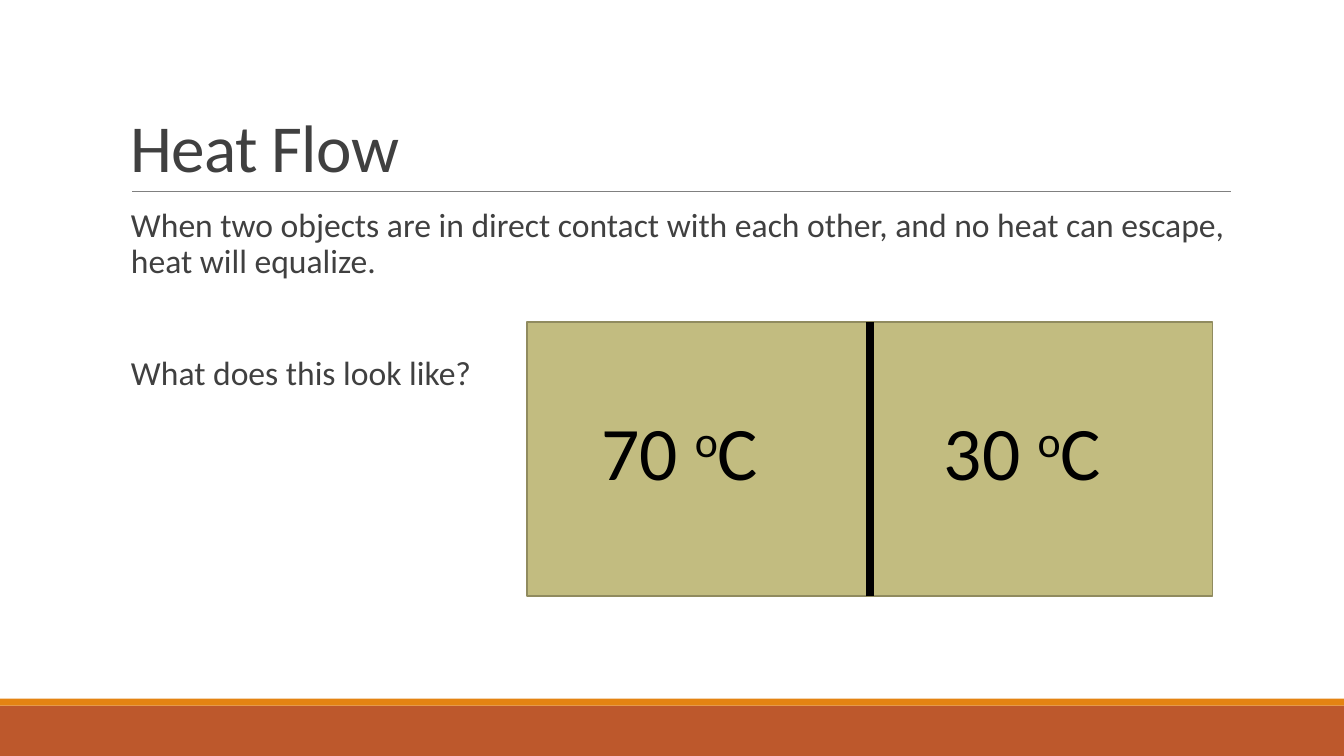
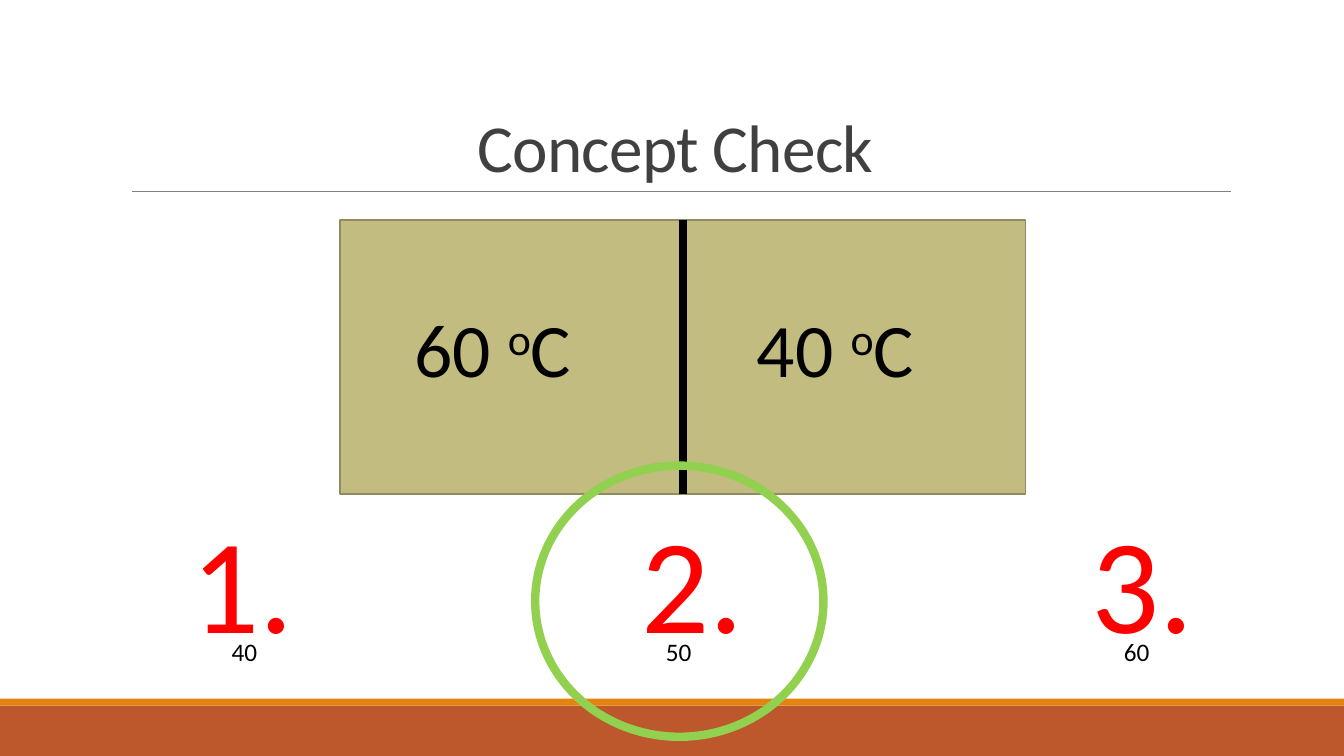
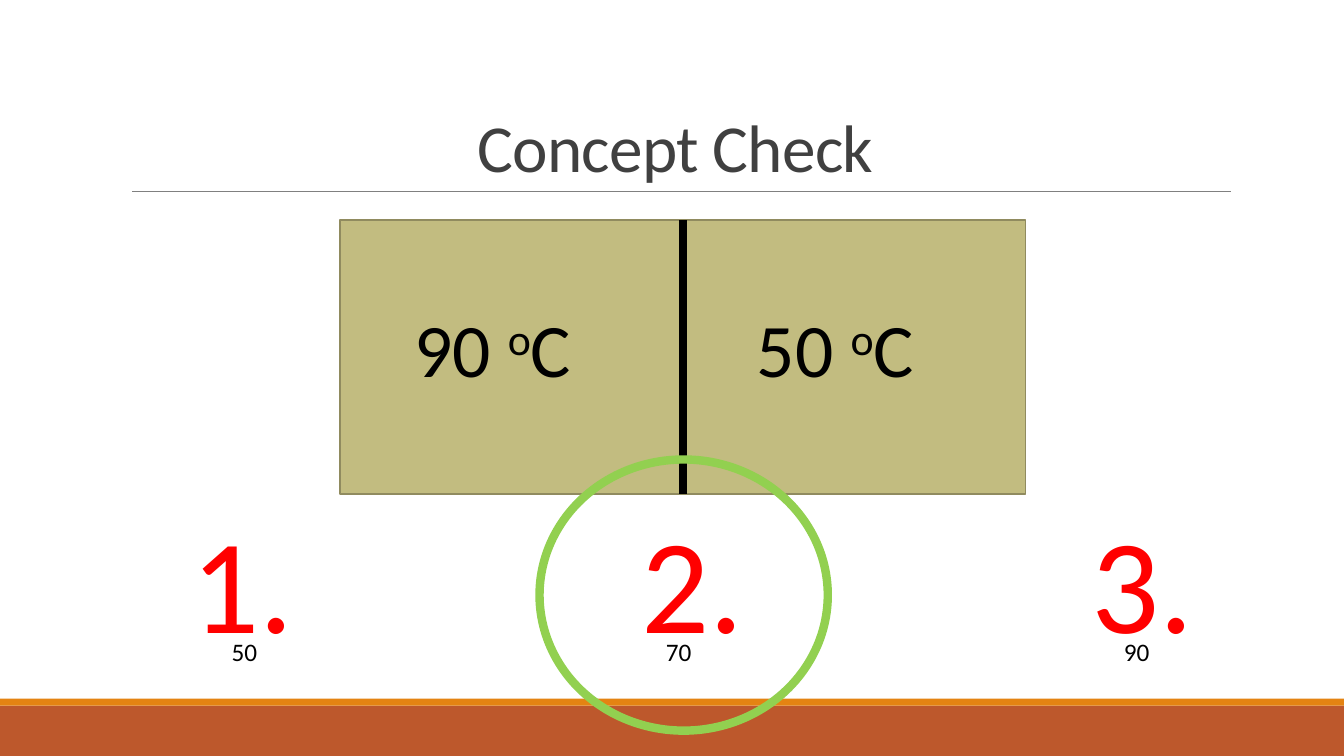
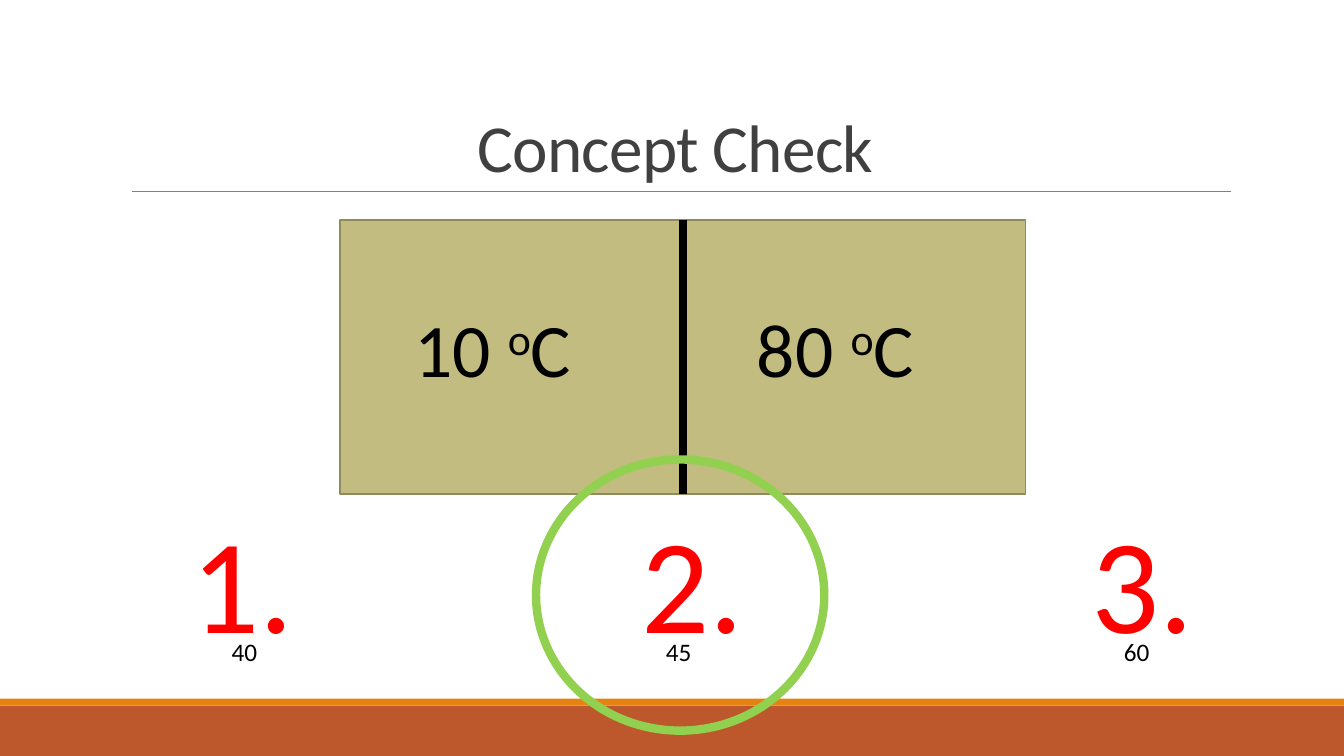
from dataclasses import dataclass

from lxml.etree import SubElement
from pptx import Presentation
from pptx.dml.color import RGBColor
from pptx.enum.shapes import MSO_CONNECTOR, MSO_SHAPE
from pptx.enum.text import MSO_ANCHOR, MSO_AUTO_SIZE, PP_ALIGN
from pptx.oxml.ns import qn
from pptx.shapes.autoshape import Shape
from pptx.shapes.connector import Connector
from pptx.slide import Slide
from pptx.text.text import TextFrame, _Paragraph
from pptx.util import Pt


@dataclass(frozen=True)
class Theme:
    font: str = "Calibri"
    ink: str = "404040"
    black: str = "000000"
    rule: str = "808080"
    footer: str = "BD582C"
    footer_edge: str = "E48312"
    block: str = "C2BC80"
    block_edge: str = "908B5F"
    number: str = "FF0000"
    correct: str = "92D050"
    title_size: float = 48
    body_size: float = 24
    degrees_size: float = 54
    number_size: float = 96
    answer_size: float = 18


@dataclass(frozen=True)
class Box:
    """A rectangle on the slide, in points."""
    left: float
    top: float
    width: float
    height: float

    def lengths(self) -> tuple[Pt, Pt, Pt, Pt]:
        return Pt(self.left), Pt(self.top), Pt(self.width), Pt(self.height)


@dataclass(frozen=True)
class Check:
    temperatures: tuple[int, int]
    answers: tuple[int, int, int]
    ring_left: float
    ring_top: float


THEME = Theme()
SLIDE_WIDTH, SLIDE_HEIGHT = 960, 540
FOOTER_TOP, FOOTER_EDGE_HEIGHT = 504, 4.9
RULE_LEFT, RULE_RIGHT, RULE_TOP = 94.4, 879, 136.8
TITLE = Box(86.4, 22.3, 792, 114.5)
BODY = Box(93.6, 145.4, 784.8, 316.8)
BLOCK_WIDTH, BLOCK_HEIGHT = 489.6, 195.8
NUMBER_LEFT, NUMBER_STEP, NUMBER_TOP = 129.6, 321.5, 352.8
ANSWER_CENTRES, ANSWER_WIDTH, ANSWER_TOP = (174.6, 484.7, 811.8), 132, 450.7
RING_WIDTH, RING_HEIGHT = 205.9, 193.7

BODY_TEXT = (
    "When two objects are in direct contact with each other, "
    "and no heat can escape, heat will equalize.",
    "What does this look like?",
)
CHECKS = (
    Check((60, 40), (40, 50, 60), 382.3, 332.6),
    Check((90, 50), (50, 70, 90), 385.4, 328.2),
    Check((10, 80), (40, 45, 60), 382.9, 328.2),
)


# Drawing helpers
def rgb(colour: str) -> RGBColor:
    return RGBColor.from_string(colour)


def add_figure(slide: Slide, kind: MSO_SHAPE, box: Box, fill: str | None = None,
               line: str | None = None, line_width: float = 0) -> Shape:
    figure = slide.shapes.add_shape(kind, *box.lengths())
    figure.shadow.inherit = False
    if fill:
        figure.fill.solid()
        figure.fill.fore_color.rgb = rgb(fill)
    else:
        figure.fill.background()
    if line:
        figure.line.color.rgb = rgb(line)
        figure.line.width = Pt(line_width)
    else:
        figure.line.fill.background()
    return figure


def add_line(slide: Slide, start: tuple[float, float], end: tuple[float, float],
             colour: str, width: float) -> Connector:
    line = slide.shapes.add_connector(
        MSO_CONNECTOR.STRAIGHT, *(Pt(value) for value in (*start, *end)))
    line.line.color.rgb = rgb(colour)
    line.line.width = Pt(width)
    SubElement(line._element.spPr, qn("a:effectLst"))
    return line


def add_text_frame(slide: Slide, box: Box) -> TextFrame:
    frame = slide.shapes.add_textbox(*box.lengths()).text_frame
    frame.word_wrap = True
    return frame


def style(paragraph: _Paragraph, size: float, colour: str,
          align: PP_ALIGN = PP_ALIGN.LEFT) -> None:
    paragraph.alignment = align
    paragraph.font.name = THEME.font
    paragraph.font.size = Pt(size)
    paragraph.font.color.rgb = rgb(colour)


def add_label(slide: Slide, box: Box, text: str, size: float, colour: str,
              align: PP_ALIGN = PP_ALIGN.LEFT) -> None:
    frame = add_text_frame(slide, box)
    frame.auto_size = MSO_AUTO_SIZE.SHAPE_TO_FIT_TEXT
    frame.text = text
    style(frame.paragraphs[0], size, colour, align)


# Parts of the slides
def add_titled_slide(deck: Presentation, title: str, align: PP_ALIGN) -> Slide:
    slide = deck.slides.add_slide(deck.slide_layouts[6])
    add_figure(slide, MSO_SHAPE.RECTANGLE,
               Box(0, FOOTER_TOP, SLIDE_WIDTH, SLIDE_HEIGHT - FOOTER_TOP), THEME.footer)
    add_figure(slide, MSO_SHAPE.RECTANGLE,
               Box(0, FOOTER_TOP - FOOTER_EDGE_HEIGHT, SLIDE_WIDTH, FOOTER_EDGE_HEIGHT),
               THEME.footer_edge)
    add_line(slide, (RULE_LEFT, RULE_TOP), (RULE_RIGHT, RULE_TOP), THEME.rule, 0.5)

    frame = add_text_frame(slide, TITLE)
    frame.vertical_anchor = MSO_ANCHOR.BOTTOM
    frame.text = title
    heading = frame.paragraphs[0]
    style(heading, THEME.title_size, THEME.ink, align)
    heading.line_spacing = 0.85
    heading.runs[0]._r.get_or_add_rPr().set("spc", "-50")
    return slide


def add_body(slide: Slide) -> None:
    frame = add_text_frame(slide, BODY)
    frame.margin_left = frame.margin_right = 0
    frame.text = "\n".join(BODY_TEXT)
    for paragraph in frame.paragraphs:
        style(paragraph, THEME.body_size, THEME.ink)
        paragraph.line_spacing = 0.9
    frame.paragraphs[-1].space_before = Pt(54)


def add_degrees(slide: Slide, box: Box, temperature: int) -> None:
    frame = add_text_frame(slide, box)
    frame.auto_size = MSO_AUTO_SIZE.SHAPE_TO_FIT_TEXT
    paragraph = frame.paragraphs[0]
    style(paragraph, THEME.degrees_size, THEME.black)
    for text in (f"{temperature} ", "o", "C"):
        run = paragraph.add_run()
        run.text = text
        if text == "o":
            run._r.get_or_add_rPr().set("baseline", "30000")


def add_contact_blocks(slide: Slide, left: float, top: float,
                       temperatures: tuple[int, int]) -> None:
    blocks = add_figure(slide, MSO_SHAPE.RECTANGLE,
                        Box(left, top, BLOCK_WIDTH, BLOCK_HEIGHT),
                        THEME.block, THEME.block_edge, 1.25)
    half = BLOCK_WIDTH / 2
    divider = add_line(slide, (left + half, top + BLOCK_HEIGHT), (left + half, top),
                       THEME.black, 6)
    divider.begin_connect(blocks, 2)
    divider.end_connect(blocks, 0)
    for side, temperature in enumerate(temperatures):
        add_degrees(slide, Box(left + 45.8 + side * half, top + 55.4, 153.4, 72.7),
                    temperature)


def add_answers(slide: Slide, check: Check) -> None:
    for index, (answer, centre) in enumerate(zip(check.answers, ANSWER_CENTRES)):
        add_label(slide, Box(NUMBER_LEFT + index * NUMBER_STEP, NUMBER_TOP, 97.2, 123.8),
                  f"{index + 1}.", THEME.number_size, THEME.number)
        add_label(slide, Box(centre - ANSWER_WIDTH / 2, ANSWER_TOP, ANSWER_WIDTH, 28.8),
                  str(answer), THEME.answer_size, THEME.black, PP_ALIGN.CENTER)
    add_figure(slide, MSO_SHAPE.OVAL,
               Box(check.ring_left, check.ring_top, RING_WIDTH, RING_HEIGHT),
               line=THEME.correct, line_width=6)


def main() -> None:
    deck = Presentation()
    deck.slide_width, deck.slide_height = Pt(SLIDE_WIDTH), Pt(SLIDE_HEIGHT)

    # Introduction
    heat_flow = add_titled_slide(deck, "Heat Flow", PP_ALIGN.LEFT)
    add_body(heat_flow)
    add_contact_blocks(heat_flow, 376.5, 230.2, (70, 30))

    # Questions
    for check in CHECKS:
        question = add_titled_slide(deck, "Concept Check", PP_ALIGN.CENTER)
        add_contact_blocks(question, 242.9, 156.9, check.temperatures)
        add_answers(question, check)

    deck.save("out.pptx")


if __name__ == "__main__":
    main()
